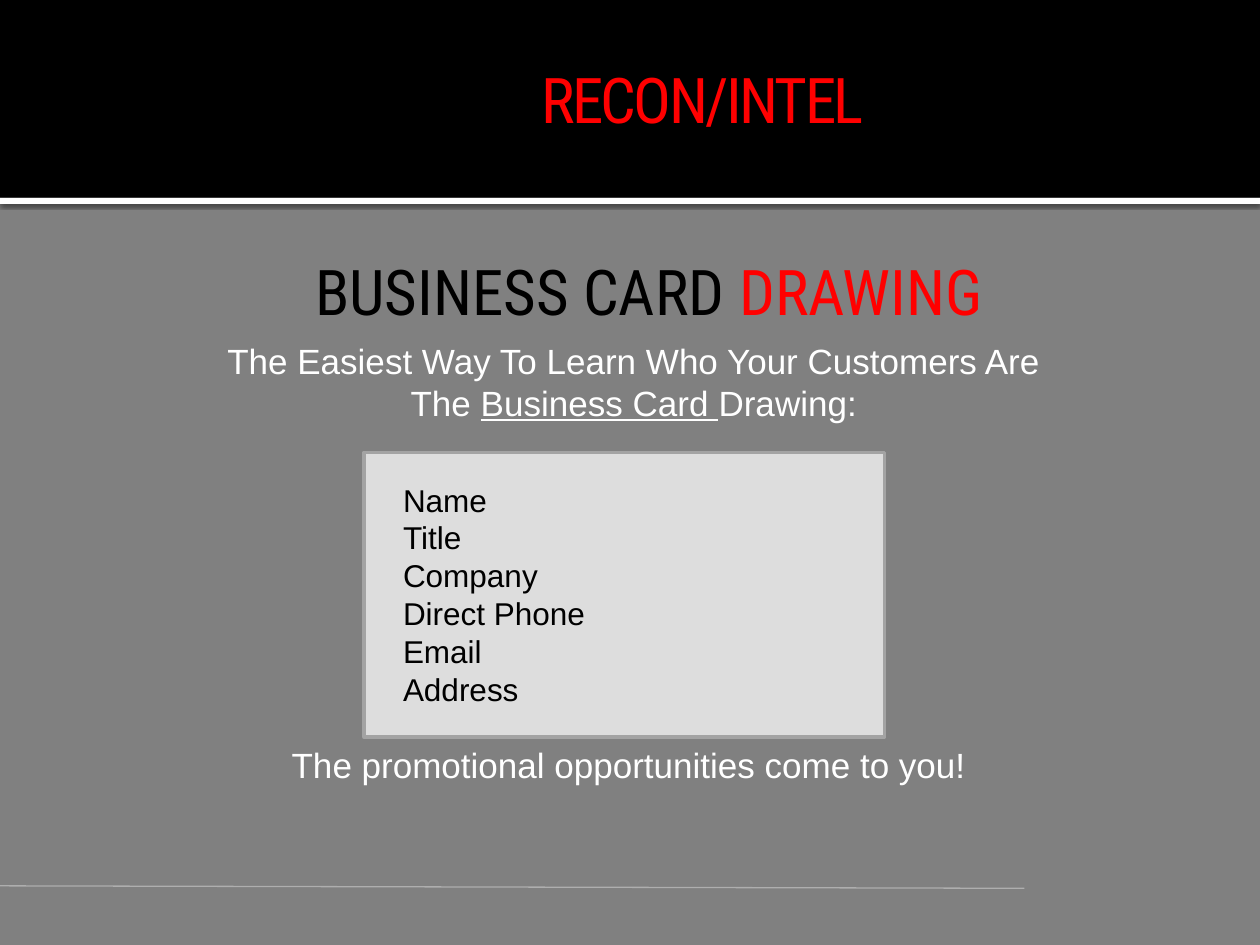
from lxml import etree
from pptx import Presentation
from pptx import util as u
from pptx.dml.color import RGBColor
from pptx.enum import shapes, text
from pptx.oxml import parse_xml
from pptx.oxml.ns import nsdecls, qn

Pt = u.Pt


def tint(code):
    return RGBColor.from_string(code)


class Deck:
    body = "Arial"
    head = "Roboto Condensed"
    black, white, red = "000000", "FFFFFF", "FF0000"
    lead = 1.2

    def __init__(self, wide, high):
        self.show = Presentation()
        self.show.slide_width, self.show.slide_height = Pt(wide), Pt(high)
        self.slide = self.show.slides.add_slide(self.show.slide_layouts[6])

    def back(self, code):
        fill = self.slide.background.fill
        fill.solid()
        fill.fore_color.rgb = tint(code)

    def rect(self, box, code, edge=None, width=0):
        form = self.slide.shapes.add_shape(
            shapes.MSO_SHAPE.RECTANGLE, *map(Pt, box))
        form.shadow.inherit = False
        form.fill.solid()
        form.fill.fore_color.rgb = tint(code)
        if edge:
            form.line.color.rgb = tint(edge)
            form.line.width = Pt(width)
        else:
            form.line.fill.background()
        return form

    def shade(self, form, blur, drop, alpha):
        list_ = form._element.spPr.find(qn("a:effectLst"))
        list_.append(parse_xml(
            f'<a:outerShdw {nsdecls("a")} blurRad="{Pt(blur)}" '
            f'dist="{Pt(drop)}" dir="5400000" rotWithShape="0">'
            f'<a:srgbClr val="{self.black}"><a:alpha val="{alpha * 1000}"/>'
            '</a:srgbClr></a:outerShdw>'))

    def rule(self, ends, code, width):
        line = self.slide.shapes.add_connector(
            shapes.MSO_CONNECTOR.STRAIGHT, *map(Pt, ends))
        line.line.color.rgb = tint(code)
        line.line.width = Pt(width)
        etree.SubElement(line._element.spPr, qn("a:effectLst"))

    def text(self, box, rows, size, face, align=text.PP_ALIGN.CENTER, track=0):
        frame = self.slide.shapes.add_textbox(*map(Pt, box)).text_frame
        frame.word_wrap = True
        frame.auto_size = text.MSO_AUTO_SIZE.SHAPE_TO_FIT_TEXT
        frame.margin_top = Pt(4.6)
        for i, row in enumerate(rows):
            para = frame.add_paragraph() if i else frame.paragraphs[0]
            para.alignment = align
            para.line_spacing = Pt(size * self.lead)
            for words, code, under in row:
                run = para.add_run()
                run.text = words
                font = run.font
                font.name, font.size = face, Pt(size)
                font.color.rgb = tint(code)
                if under:
                    font.underline = True
                if track:
                    font._element.set("spc", str(int(track * 100)))


def main():
    deck = Deck(720, 540)
    black, white, red = deck.black, deck.white, deck.red
    deck.back("808080")
    band = deck.rect((0, 113, 720, 3.6), white)
    deck.shade(band, 2.5, 0.8, 60)
    deck.rect((0, 0, 720, 113), black)
    deck.rule((585.4, 507.6, -2.9, 506.2), "AEAEAE", 0.75)

    deck.rect((208.1, 258.5, 297.4, 162.7), "DDDDDD", "A3A3A3", 2)
    names = ("Name", "Title", "Company", "Direct Phone", "Email", "Address")
    deck.text((223.2, 270, 272.9, 138.2),
              [[(name, black, False)] for name in names],
              18, deck.body, text.PP_ALIGN.LEFT)

    deck.text((69.1, 420.5, 586.1, 31.7),
              [[("The promotional opportunities come to you! ", white, False)]],
              20, deck.body)
    deck.text((69.1, 139.7, 603.4, 51.1),
              [[("BUSINESS CARD ", black, False), ("DRAWING", red, False)]],
              36, deck.head)
    deck.text((69.1, 189.4, 586.1, 56),
              [[("The Easiest Way To Learn Who Your Customers Are", white, False)],
               [("The ", white, False), ("Business Card ", white, True),
                ("Drawing:", white, False)]],
              20, deck.body)
    deck.text((223.2, 30.2, 356.4, 51.1), [[("RECON/INTEL", red, False)]],
              36, deck.head, track=-1.5)
    deck.show.save("out.pptx")


if __name__ == "__main__":
    main()
